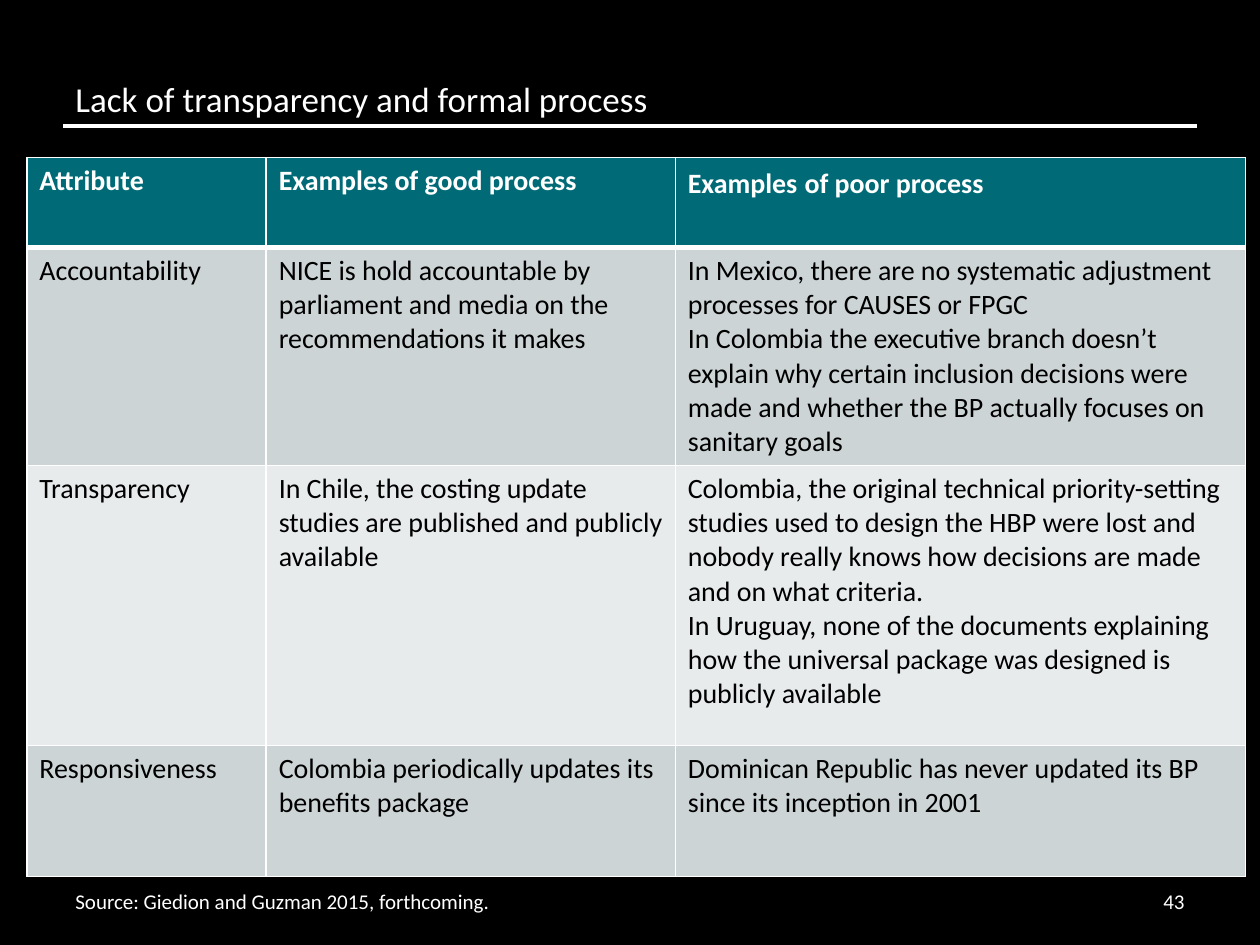
from dataclasses import dataclass

from lxml import etree
from pptx import Presentation
from pptx.dml.color import RGBColor
from pptx.enum.shapes import MSO_CONNECTOR
from pptx.enum.text import MSO_ANCHOR, PP_ALIGN
from pptx.oxml.ns import qn
from pptx.util import Pt

STRAIGHT = MSO_CONNECTOR.STRAIGHT
MIDDLE, BOTTOM = MSO_ANCHOR.MIDDLE, MSO_ANCHOR.BOTTOM
LEFT, RIGHT = PP_ALIGN.LEFT, PP_ALIGN.RIGHT


@dataclass(frozen=True)
class Theme:
    font: str = "Calibri"
    background: str = "000000"
    light: str = "FFFFFF"
    dark: str = "000000"
    header: str = "006B77"
    bands: tuple[str, str] = ("CCD4D6", "E7EBEC")
    title_size: float = 20
    header_gap_size: float = 18
    table_size: float = 16
    footer_size: float = 12
    rule: float = 2.25
    border: float = 1
    header_border: float = 3


@dataclass(frozen=True)
class Label:
    text: str
    left: float
    top: float
    width: float
    height: float
    size: float
    anchor: MSO_ANCHOR
    align: PP_ALIGN = LEFT


@dataclass(frozen=True)
class Attribute:
    name: str
    good: str
    poor: str
    height: float


THEME = Theme()

LABELS = [
    Label("Lack of transparency and formal process",
          36, 21.6, 648, 50.4, THEME.title_size, BOTTOM),
    Label("Source: Giedion and Guzman 2015, forthcoming.",
          36, 500.4, 511.2, 28.8, THEME.footer_size, MIDDLE),
    Label("43", 643, 500.4, 41, 28.8, THEME.footer_size, MIDDLE, RIGHT),
]

TABLE_LEFT, TABLE_TOP = 15.3, 90
COLUMN_WIDTHS = [136.8, 233.8, 325.9]
ROWS = [
    Attribute("Attribute", "Examples of good process",
              "Examples of poor process", 51.4),
    Attribute("Accountability",
              "NICE is hold accountable by parliament and media on the "
              "recommendations it makes",
              "In Mexico, there are no systematic adjustment processes for "
              "CAUSES or FPGC\n"
              "In Colombia the executive branch doesn’t explain why certain "
              "inclusion decisions were made and whether the BP actually "
              "focuses on sanitary goals", 124.6),
    Attribute("Transparency",
              "In Chile, the costing update studies are published and "
              "publicly available",
              "Colombia, the original technical priority-setting studies used "
              "to design the HBP were lost and nobody really knows how "
              "decisions are made and on what criteria.\n"
              "In Uruguay, none of the documents explaining how the universal "
              "package was designed is publicly available", 160),
    Attribute("Responsiveness",
              "Colombia periodically updates its benefits package",
              "Dominican Republic has never updated its BP since its "
              "inception in 2001", 74.9),
]


def rgb(value: str) -> RGBColor:
    return RGBColor.from_string(value)


def format_text(tf, size: float, color: str, bold: bool = False) -> None:
    for p in tf.paragraphs:
        for r in p.runs:
            r.font.name = THEME.font
            r.font.size = Pt(size)
            r.font.bold = bold
            r.font.color.rgb = rgb(color)


def add_label(s, label: Label) -> None:
    sp = s.shapes.add_textbox(Pt(label.left), Pt(label.top),
                              Pt(label.width), Pt(label.height))
    tf = sp.text_frame
    tf.word_wrap = True
    tf.vertical_anchor = label.anchor
    tf.text = label.text
    tf.paragraphs[0].alignment = label.align
    format_text(tf, label.size, THEME.light)


def add_rule(s, left: float, right: float, y: float) -> None:
    line = s.shapes.add_connector(STRAIGHT, Pt(left), Pt(y), Pt(right), Pt(y))
    line.line.color.rgb = rgb(THEME.light)
    line.line.width = Pt(THEME.rule)
    etree.SubElement(line._element.spPr, qn("a:effectLst"))


def set_borders(cell, top: float, bottom: float) -> None:
    tc_pr = cell._tc.get_or_add_tcPr()
    widths = {"L": THEME.border, "R": THEME.border, "T": top, "B": bottom}
    for side, width in widths.items():
        ln = etree.SubElement(tc_pr, qn(f"a:ln{side}"), w=str(int(Pt(width))))
        fill = etree.SubElement(ln, qn("a:solidFill"))
        etree.SubElement(fill, qn("a:srgbClr"), val=THEME.light)


def fill_cell(cell, text: str, row: int) -> None:
    is_header = row == 0
    set_borders(cell,
                top=THEME.header_border if row == 1 else THEME.border,
                bottom=THEME.header_border if is_header else THEME.border)
    cell.fill.solid()
    cell.fill.fore_color.rgb = rgb(
        THEME.header if is_header else THEME.bands[(row - 1) % 2])
    cell.text_frame.text = text
    format_text(cell.text_frame, THEME.table_size,
                THEME.light if is_header else THEME.dark, is_header)


def enlarge_first_space(cell) -> None:
    """Split the heading into runs so that its first space is larger."""
    p = cell.text_frame.paragraphs[0]
    parts = p.text.partition(" ")
    p.text = ""
    for part in parts:
        p.add_run().text = part
    format_text(cell.text_frame, THEME.table_size, THEME.light, True)
    p.runs[1].font.size = Pt(THEME.header_gap_size)


def add_attribute_table(s) -> None:
    table = s.shapes.add_table(
        len(ROWS), len(COLUMN_WIDTHS), Pt(TABLE_LEFT), Pt(TABLE_TOP),
        Pt(sum(COLUMN_WIDTHS)), Pt(sum(row.height for row in ROWS))).table
    table.first_row = table.horz_banding = False
    for column, width in zip(table.columns, COLUMN_WIDTHS):
        column.width = Pt(width)
    for i, row in enumerate(ROWS):
        table.rows[i].height = Pt(row.height)
        for j, text in enumerate((row.name, row.good, row.poor)):
            fill_cell(table.cell(i, j), text, i)
    enlarge_first_space(table.cell(0, 2))


def main() -> None:
    prs = Presentation()
    prs.slide_width, prs.slide_height = Pt(720), Pt(540)
    s = prs.slides.add_slide(prs.slide_layouts[6])
    s.background.fill.solid()
    s.background.fill.fore_color.rgb = rgb(THEME.background)

    # Title rule, title and footer
    add_rule(s, 36, 684, 72)
    for label in LABELS:
        add_label(s, label)

    # Attributes with good and poor examples
    add_attribute_table(s)

    prs.save("out.pptx")


if __name__ == "__main__":
    main()
